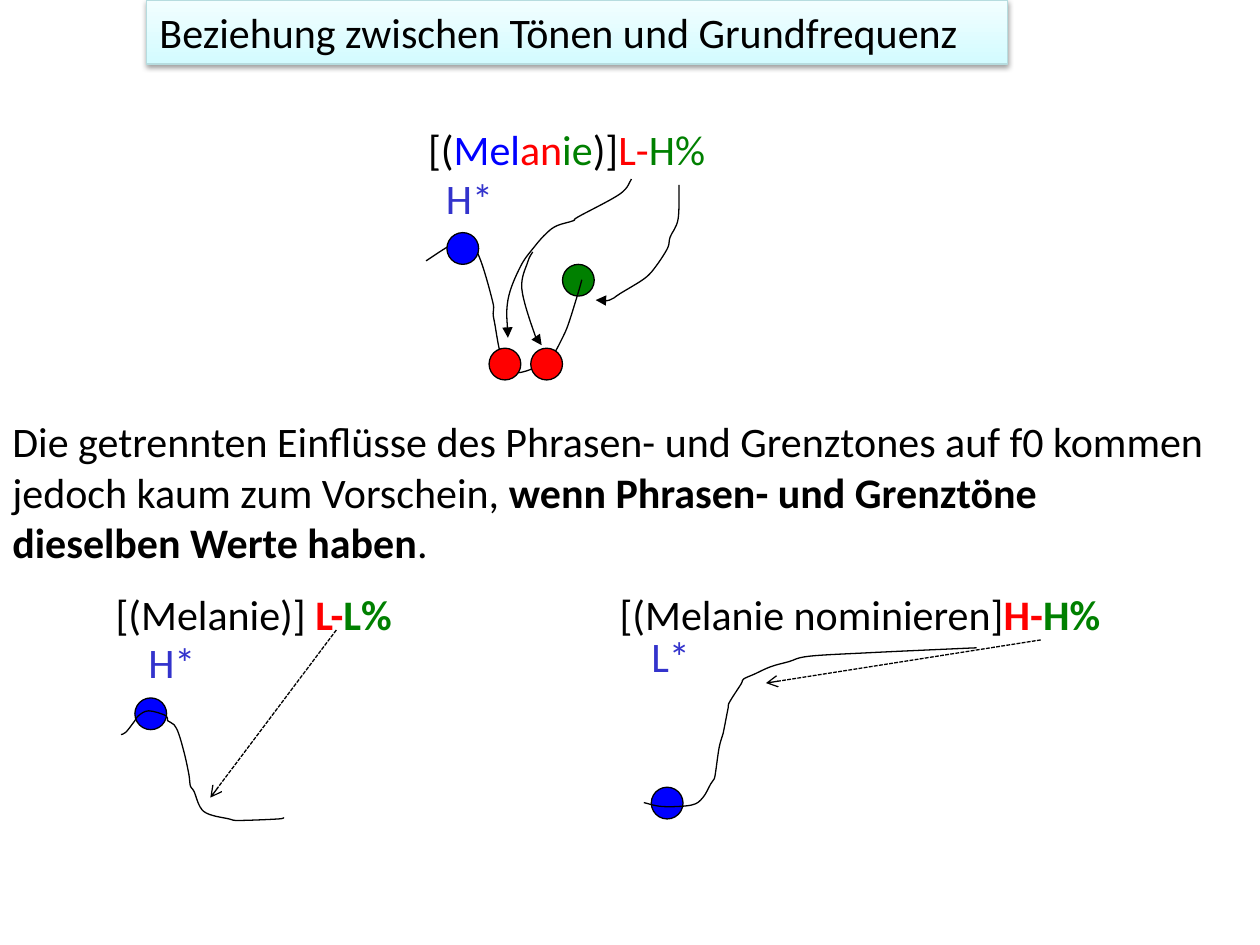
from lxml.etree import SubElement
from pptx import Presentation
from pptx.dml.color import RGBColor
from pptx.enum.dml import MSO_LINE_DASH_STYLE as DASH
from pptx.enum.shapes import MSO_CONNECTOR as CONNECTOR, MSO_SHAPE as SHAPE
from pptx.enum.text import MSO_ANCHOR as ANCHOR, MSO_AUTO_SIZE as AUTO, PP_ALIGN as ALIGN
from pptx.oxml.ns import qn
from pptx.util import Cm, Pt

BLACK, BLUE, RED, GREEN, VIOLET = "000000", "0000FF", "FF0000", "008000", "3333CC"
TITLE = "Beziehung zwischen Tönen und Grundfrequenz"

# left, top, width, height, wrap, runs of (text, colour, bold)
TEXTS = [
    (0, 8.26, 24.56, 3.33, True, [
        ("Die getrennten Einflüsse des Phrasen- und Grenztones auf f0 kommen "
         "jedoch kaum zum Vorschein, ", BLACK, False),
        ("wenn Phrasen- und Grenztöne dieselben Werte haben", BLACK, True),
        (".", BLACK, False)]),
    (2.08, 11.73, 6.2, 1.3, False, [
        ("[(Melanie)] ", BLACK, False), ("L-", RED, True), ("L%", GREEN, True)]),
    (12.24, 11.73, 10.31, 1.3, False, [
        ("[(Melanie nominieren]", BLACK, False), ("H-", RED, True), ("H%", GREEN, True)]),
    (2.74, 12.7, 1.47, 1.3, False, [("H*", VIOLET, False)]),
    (12.88, 12.58, 1.3, 1.3, False, [("L*", VIOLET, False)]),
    (8.38, 2.36, 6.27, 1.3, False, [
        ("[(", BLACK, False), ("Mel", BLUE, False), ("an", RED, False), ("ie", GREEN, False),
        (")]", BLACK, False), ("L-", RED, False), ("H%", GREEN, False)]),
    (8.74, 3.36, 1.47, 1.3, False, [("H*", VIOLET, False)]),
]

# tone targets: centre x, centre y, colour
DIAMETER = 0.64
TONES_BEHIND = [(3.04, 14.39, BLUE), (13.45, 16.19, BLUE), (11.66, 5.65, GREEN)]
TONES_IN_FRONT = [(9.33, 5.01, BLUE), (11.02, 7.34, RED), (10.18, 7.34, RED)]

F0_FALL = [
    (2.44, 14.81), (2.54, 14.76), (2.72, 14.53), (2.79, 14.43), (3, 14.33), (3.35, 14.43),
    (3.38, 14.53), (3.51, 14.61), (3.61, 14.81), (3.73, 15.24), (3.81, 15.62),
    (3.84, 15.85), (3.91, 15.95), (4.11, 16.36), (4.62, 16.51), (4.83, 16.54),
    (5.61, 16.51), (5.72, 16.48)]
F0_FALL_RISE = [
    (8.59, 5.26), (9.02, 4.98), (9.22, 4.9), (9.6, 5.05), (9.93, 6.07), (9.96, 6.45),
    (10.24, 7.47), (10.97, 7.34), (11.15, 7.16), (11.33, 6.83), (11.46, 6.53),
    (11.66, 5.89), (11.73, 5.64)]
F0_RISE = [
    (12.98, 16.18), (13.36, 16.26), (13.94, 16.23), (14.17, 16.08), (14.33, 15.8),
    (14.4, 15.7), (14.43, 15.54), (14.5, 15.06), (14.58, 14.78), (14.61, 14.63),
    (14.68, 14.27), (14.71, 14.15), (14.94, 13.79), (14.99, 13.69), (15.21, 13.59),
    (15.54, 13.44), (15.9, 13.34), (16.31, 13.23), (17.5, 13.16), (19.23, 13.08),
    (19.69, 13.06)]
BOUNDARY_ARROW = [
    (13.69, 3.73), (13.67, 4.42), (13.51, 4.78), (13.46, 5), (13.23, 5.36), (13, 5.61),
    (12.5, 5.92), (12.29, 6.05), (12.01, 6.05)]
PHRASE_ARROW = [
    (12.73, 3.61), (12.5, 3.91), (11.66, 4.37), (11.56, 4.45), (11.23, 4.55), (11.02, 4.7),
    (10.77, 4.98), (10.49, 5.38), (10.24, 6.05), (10.24, 6.81)]
PHRASE_BRANCH = [(10.74, 5.08), (10.64, 5.28), (10.52, 5.82), (10.77, 6.71), (10.92, 6.96)]
DASHED_ARROWS = [(6.78, 12.7, 4.24, 16.08), (20.98, 12.9, 15.44, 13.77)]


def rgb(colour):
    return RGBColor.from_string(colour)


def style_line(sp, colour=BLACK, dash=None, head=None):
    sp.line.color.rgb = rgb(colour)
    sp.line.width = Pt(0.75)
    if dash:
        sp.line.dash_style = dash
    if head:
        SubElement(sp.line._get_or_add_ln(), qn("a:tailEnd"), type=head)


def format_runs(p, runs):
    for text, colour, bold in runs:
        r = p.add_run()
        r.text = text
        r.font.name, r.font.size, r.font.bold = "Calibri", Pt(24), bold
        r.font.color.rgb = rgb(colour)


def add_title(s):
    sp = s.shapes.title
    sp.left, sp.top, sp.width, sp.height = Cm(2.96), Cm(0), Cm(17.35), Cm(1.29)
    sp.fill.gradient()
    sp.fill.gradient_angle = 90
    for stop, colour, position in zip(sp.fill.gradient_stops, ("D3FBFF", "F2FEFF"), (0, 1)):
        stop.color.rgb = rgb(colour)
        stop.position = position
    style_line(sp, "B6DCDF")
    effects = SubElement(sp._element.spPr, qn("a:effectLst"))
    shadow = SubElement(effects, qn("a:outerShdw"), blurRad=str(Pt(3.1)), dist=str(Pt(1.6)),
                        dir="5400000", rotWithShape="0")
    black = SubElement(shadow, qn("a:srgbClr"), val=BLACK)
    SubElement(black, qn("a:alpha"), val="38000")
    tf = sp.text_frame
    tf.auto_size, tf.vertical_anchor, tf.word_wrap = AUTO.NONE, ANCHOR.TOP, True
    tf.paragraphs[0].alignment = ALIGN.LEFT
    format_runs(tf.paragraphs[0], [(TITLE, BLACK, False)])


def add_text(s, left, top, width, height, wrap, runs):
    tf = s.shapes.add_textbox(Cm(left), Cm(top), Cm(width), Cm(height)).text_frame
    tf.word_wrap, tf.auto_size = wrap, AUTO.SHAPE_TO_FIT_TEXT
    format_runs(tf.paragraphs[0], runs)


def add_tone(s, x, y, colour):
    sp = s.shapes.add_shape(SHAPE.OVAL, Cm(x - DIAMETER / 2), Cm(y - DIAMETER / 2),
                            Cm(DIAMETER), Cm(DIAMETER))
    sp.shadow.inherit = False
    sp.fill.solid()
    sp.fill.fore_color.rgb = rgb(colour)
    style_line(sp)


def round_segments(sp):
    """Turn the straight segments of a freeform into smooth Bézier segments."""
    pts = [(int(pt.get("x")), int(pt.get("y"))) for pt in sp._element.iter(qn("a:pt"))]
    padded = [pts[0], *pts, pts[-1]]
    segments = list(sp._element.iter(qn("a:lnTo")))
    for segment, a, b, c, d in zip(segments, padded, padded[1:], padded[2:], padded[3:]):
        curve = SubElement(segment.getparent(), qn("a:cubicBezTo"))
        leave = [q + (r - p) / 6 for p, q, r in zip(a, b, c)]
        arrive = [q - (r - p) / 6 for p, q, r in zip(b, c, d)]
        for x, y in (leave, arrive, c):
            SubElement(curve, qn("a:pt"), x=str(round(x)), y=str(round(y)))
        segment.getparent().replace(segment, curve)


def add_curve(s, points, head=None):
    start, *rest = [(Cm(x), Cm(y)) for x, y in points]
    builder = s.shapes.build_freeform(*start)
    builder.add_line_segments(rest, close=False)
    sp = builder.convert_to_shape()
    round_segments(sp)
    sp.shadow.inherit = False
    sp.fill.background()
    style_line(sp, head=head)


def add_dashed_arrow(s, *ends):
    line = s.shapes.add_connector(CONNECTOR.STRAIGHT, *map(Cm, ends))
    style_line(line, dash=DASH.SQUARE_DOT, head="arrow")
    SubElement(line._element.spPr, qn("a:effectLst"))


def main():
    prs = Presentation()
    prs.slide_width, prs.slide_height = Cm(25.4), Cm(19.05)
    s = prs.slides.add_slide(prs.slide_layouts[5])
    add_title(s)
    for text in TEXTS:
        add_text(s, *text)
    for tone in TONES_BEHIND:
        add_tone(s, *tone)
    for contour in (F0_FALL, F0_FALL_RISE, F0_RISE):
        add_curve(s, contour)
    for tone in TONES_IN_FRONT:
        add_tone(s, *tone)
    for arrow in (BOUNDARY_ARROW, PHRASE_ARROW, PHRASE_BRANCH):
        add_curve(s, arrow, "triangle")
    for ends in DASHED_ARROWS:
        add_dashed_arrow(s, *ends)
    prs.save("out.pptx")


if __name__ == "__main__":
    main()
